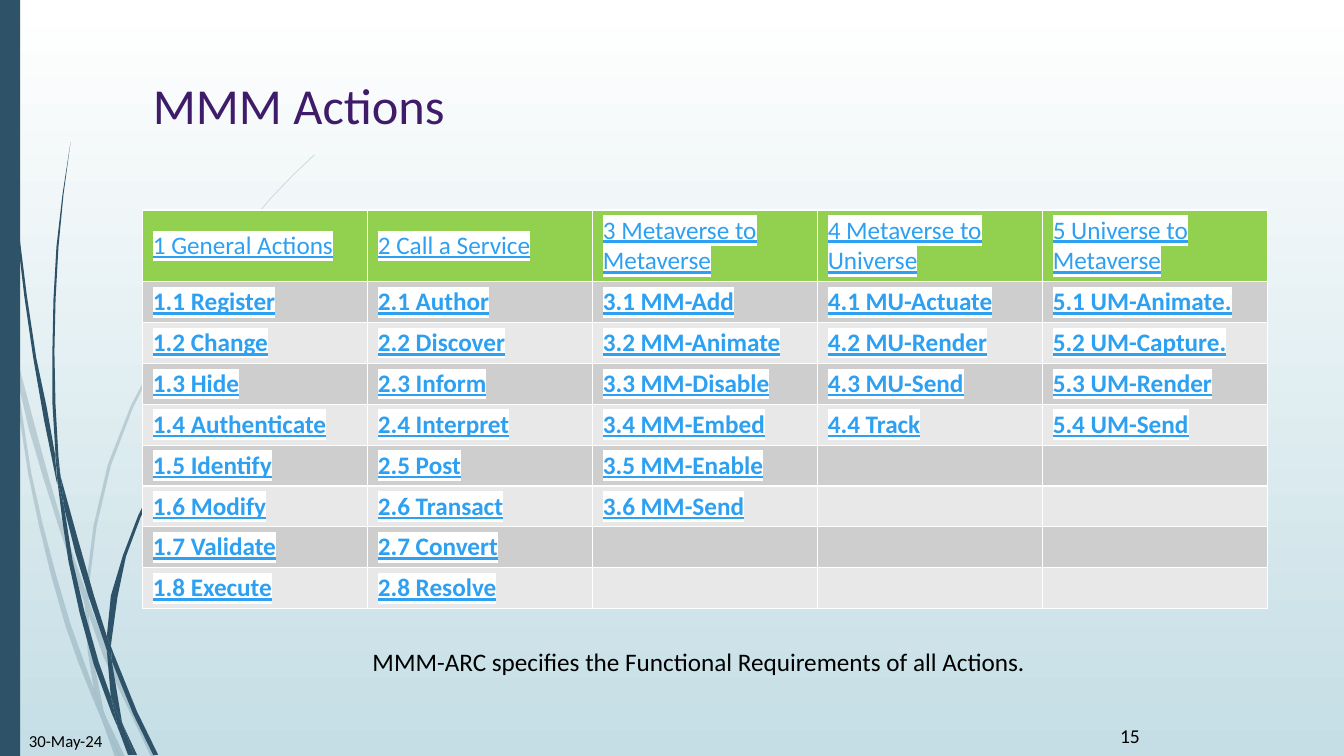
from math import hypot
from lxml.etree import SubElement
from pptx import Presentation
from pptx.dml.color import RGBColor
from pptx.enum.shapes import MSO_SHAPE
from pptx.enum.text import MSO_ANCHOR, MSO_AUTO_SIZE, PP_ALIGN
from pptx.oxml.ns import qn
from pptx.util import Pt

FONT = "Calibri"
WHITE = RGBColor(0xFF, 0xFF, 0xFF)
BLACK = RGBColor(0, 0, 0)
MIST = RGBColor(0xC5, 0xDE, 0xE5)
NAVY = RGBColor(0x2E, 0x53, 0x69)
PURPLE = RGBColor(0x3F, 0x1C, 0x6A)
BLUE = RGBColor(0x2D, 0xA0, 0xF1)
GREEN = RGBColor(0x92, 0xD0, 0x50)
DARK = RGBColor(0xCE, 0xCE, 0xCE)
LIGHT = RGBColor(0xE8, 0xE8, 0xE8)

HEADS = ["1 General Actions", "2 Call a Service", "3 Metaverse to Metaverse",
         "4 Metaverse to Universe", "5 Universe to Metaverse"]
ROWS = [
    ["1.1 Register", "2.1 Author", "3.1 MM-Add", "4.1 MU-Actuate", "5.1 UM-Animate."],
    ["1.2 Change", "2.2 Discover", "3.2 MM-Animate", "4.2 MU-Render", "5.2 UM-Capture."],
    ["1.3 Hide", "2.3 Inform", "3.3 MM-Disable", "4.3 MU-Send", "5.3 UM-Render"],
    ["1.4 Authenticate", "2.4 Interpret", "3.4 MM-Embed", "4.4 Track", "5.4 UM-Send"],
    ["1.5 Identify", "2.5 Post", "3.5 MM-Enable", "", ""],
    ["1.6 Modify", "2.6 Transact", "3.6 MM-Send", "", ""],
    ["1.7 Validate", "2.7 Convert", "", "", ""],
    ["1.8 Execute", "2.8 Resolve", "", "", ""],
]

# Grass outlines, on a grid with this step
STEP = Pt(0.72)
PALE = [
    [(11, 350), (9, 322), (0, 282), (0, 299), (10, 344)],
    [(58, 522), (84, 599), (85, 586), (62, 520), (14, 345), (17, 376)],
    [(92, 607), (88, 596), (88, 610), (123, 694), (150, 751), (155, 751), (127, 692)],
    [(119, 751), (124, 751), (105, 711)],
    [(93, 683), (70, 619), (31, 469), (17, 376), (11, 350), (28, 470), (65, 621),
     (92, 693), (101, 714), (99, 707)],
    [(84, 599), (87, 646), (93, 683), (96, 692), (105, 711), (103, 706), (91, 646),
     (88, 610), (88, 608)],
    [(88, 584), (110, 462), (160, 349), (229, 245), (268, 198), (290, 175), (312, 154),
     (312, 153), (289, 175), (268, 197), (228, 244), (158, 348), (107, 461), (85, 584),
     (85, 586), (88, 596)],
    [(101, 714), (114, 751), (119, 751)],
    [(88, 608), (88, 610), (88, 596), (85, 586), (84, 599)],
    [(96, 692), (93, 683), (99, 707), (101, 714), (119, 751), (105, 711)],
]
DEEP = [
    [(7, 110), (17, 233), (33, 355), (56, 477), (57, 481), (55, 457), (55, 453),
     (36, 355), (19, 232), (8, 109), (5, 48), (4, 0), (3, 0), (4, 48)],
    [(88, 592), (106, 645), (106, 633), (106, 631), (93, 590), (60, 472), (64, 505)],
    [(113, 649), (110, 641), (111, 656), (132, 708), (152, 749), (157, 749), (136, 706)],
    [(110, 691), (98, 657), (72, 556), (64, 505), (57, 477), (68, 557), (93, 659),
     (111, 708), (117, 722), (116, 717)],
    [(60, 472), (58, 453), (54, 349), (58, 245), (63, 193), (70, 141), (62, 193),
     (56, 245), (52, 349), (55, 449)],
    [(133, 749), (136, 749), (122, 719)],
    [(57, 477), (64, 505), (60, 472), (55, 449), (55, 453)],
    [(111, 633), (125, 552), (158, 476), (205, 406), (231, 374), (245, 359), (261, 344),
     (260, 344), (245, 358), (231, 373), (204, 405), (156, 474), (122, 551), (106, 631),
     (110, 641)],
    [(117, 722), (127, 749), (131, 749)],
    [(106, 645), (110, 691), (116, 706), (122, 719), (121, 716), (111, 656), (109, 651)],
    [(106, 645), (109, 651), (111, 656), (110, 641), (106, 631), (106, 633)],
    [(116, 706), (110, 691), (116, 717), (117, 722), (130, 749), (133, 749), (122, 719)],
]


def aim(a, b):
    """Unit vector from a to b."""
    far = hypot(b[0] - a[0], b[1] - a[1])
    return (b[0] - a[0]) / far, (b[1] - a[1]) / far


def curve(dots, span=50):
    """Smooth the long sides of a closed outline, but keep its sharp corners."""
    size = len(dots)
    ways = [aim(dots[i], dots[(i + 1) % size]) for i in range(size)]
    ends = []
    for i in range(size):
        (ax, ay), (bx, by) = ways[i - 1], ways[i]
        mean = (ax + bx) / 2, (ay + by) / 2
        ends.append((mean, mean) if ax * bx + ay * by > 0.5 else (ways[i - 1], ways[i]))
    line = []
    for i, a in enumerate(dots):
        j = (i + 1) % size
        b = dots[j]
        far = hypot(b[0] - a[0], b[1] - a[1])
        reach, cuts = far / 3, max(1, round(far / span))
        for t in (n / cuts for n in range(cuts)):
            s = 1 - t
            line.append(tuple(
                (s**3 * a[k] + 3 * s * s * t * (a[k] + reach * ends[i][1][k])
                 + 3 * s * t * t * (b[k] - reach * ends[j][0][k]) + t**3 * b[k]) * STEP
                for k in (0, 1)))
    return line


def paint(shape, alpha=100):
    shape.shadow.inherit = False
    shape.fill.solid()
    shape.fill.fore_color.rgb = NAVY
    shape.line.fill.background()
    if alpha < 100:
        tint = shape.element.spPr.find(qn("a:solidFill"))[0]
        SubElement(tint, qn("a:alpha"), val=str(alpha * 1000))


def blade(slide, dots, alpha):
    line = curve(dots)
    pen = slide.shapes.build_freeform(*line[0])
    pen.add_line_segments(line[1:])
    paint(pen.convert_to_shape(), alpha)


def write(frame, text, size=18, color=BLACK, bold=False, link=False):
    """Put one formatted line of text in a frame."""
    para = frame.paragraphs[0]
    para.alignment = PP_ALIGN.LEFT
    run = para.add_run()
    run.text = text
    font = run.font
    font.size, font.bold, font.name = Pt(size), bold, FONT
    font.color.rgb = color
    if link:
        font.underline = True
        props = run._r.get_or_add_rPr()
        mark = SubElement(props, qn("a:highlight"))
        SubElement(mark, qn("a:srgbClr"), val=str(WHITE))
        props.find(qn("a:solidFill")).addnext(mark)


def label(slide, text, left, top, width, height, wrap=True, **style):
    frame = slide.shapes.add_textbox(Pt(left), Pt(top), Pt(width), Pt(height)).text_frame
    frame.word_wrap = wrap
    if not wrap:
        frame.auto_size = MSO_AUTO_SIZE.SHAPE_TO_FIT_TEXT
    write(frame, text, **style)


def grid(slide, left, top, width, head=50.5, high=29.2):
    """Table whose white rules come from its default style."""
    lines = [HEADS] + ROWS
    table = slide.shapes.add_table(len(lines), len(HEADS), Pt(left), Pt(top), Pt(width),
                                   Pt(head + high * len(ROWS))).table
    for i, texts in enumerate(lines):
        table.rows[i].height = Pt(high if i else head)
        for j, text in enumerate(texts):
            cell = table.cell(i, j)
            cell.vertical_anchor = MSO_ANCHOR.MIDDLE
            cell.fill.solid()
            cell.fill.fore_color.rgb = (DARK if i % 2 else LIGHT) if i else GREEN
            if text:
                write(cell.text_frame, text, color=BLUE, bold=i > 0, link=True)


def main():
    deck = Presentation()
    deck.slide_width, deck.slide_height = Pt(960), Pt(540)
    slide = deck.slides.add_slide(deck.slide_layouts[5])

    # Background
    back = slide.background.fill
    back.gradient()
    back.gradient_angle = 270
    for stop, color, place in zip(back.gradient_stops, (WHITE, MIST), (0, 1)):
        stop.color.rgb, stop.position = color, place

    # Grass and side bar
    for blades, alpha in ((PALE, 20), (DEEP, 100)):
        for dots in blades:
            blade(slide, dots, alpha)
    paint(slide.shapes.add_shape(MSO_SHAPE.RECTANGLE, 0, 0, Pt(14.4), Pt(540)))

    # Title, moved in front of the grass
    title = slide.shapes.title
    title.left, title.top, title.width, title.height = Pt(102), Pt(49), Pt(803.5), Pt(101)
    title.text_frame.vertical_anchor = MSO_ANCHOR.TOP
    write(title.text_frame, "MMM Actions", size=36, color=PURPLE)
    slide.shapes._spTree.append(title.element)

    # Table, date, page number and caption
    grid(slide, 102, 150, 803.5)
    label(slide, "30-May-24", 13.5, 518.5, 78.5, 29, size=12)
    label(slide, "15", 793, 517, 44, 3.6, size=14)
    label(slide, "MMM-ARC specifies the Functional Requirements of all Actions.",
          259, 458, 490, 29, wrap=False)

    deck.save("out.pptx")


if __name__ == "__main__":
    main()
